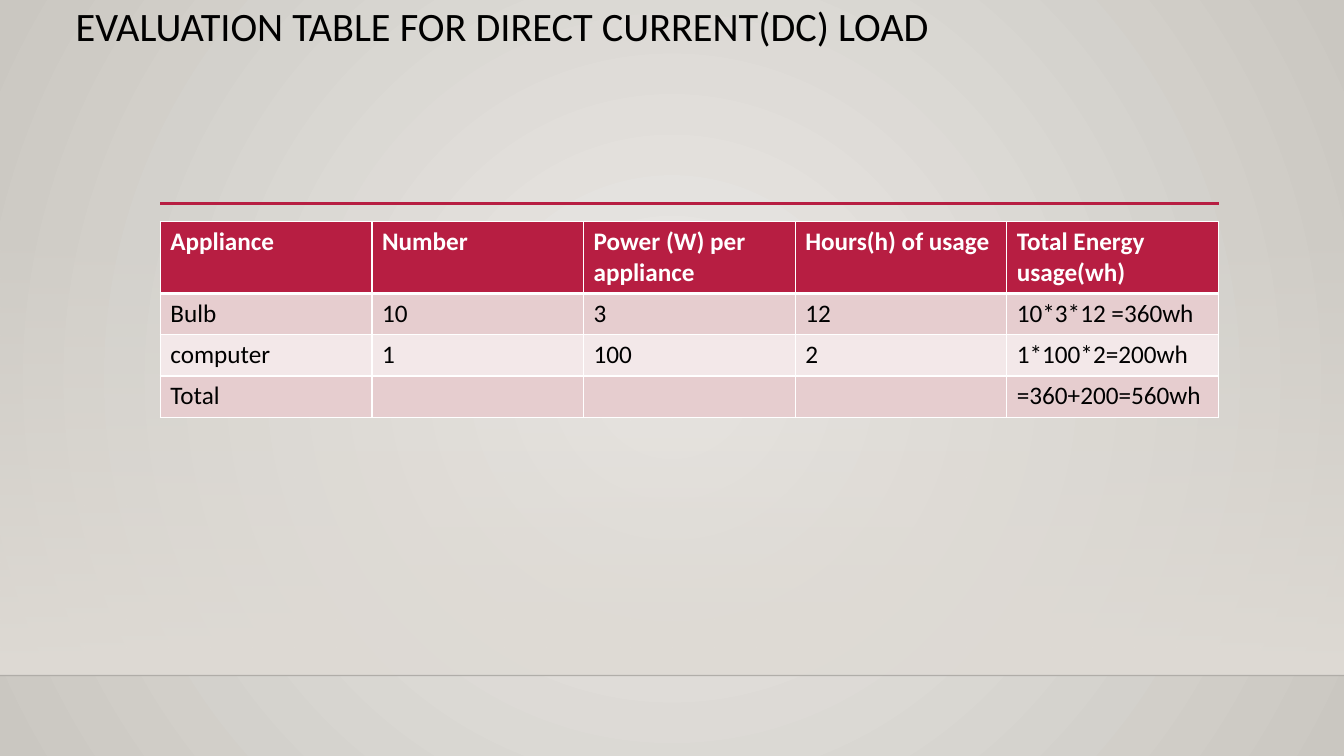
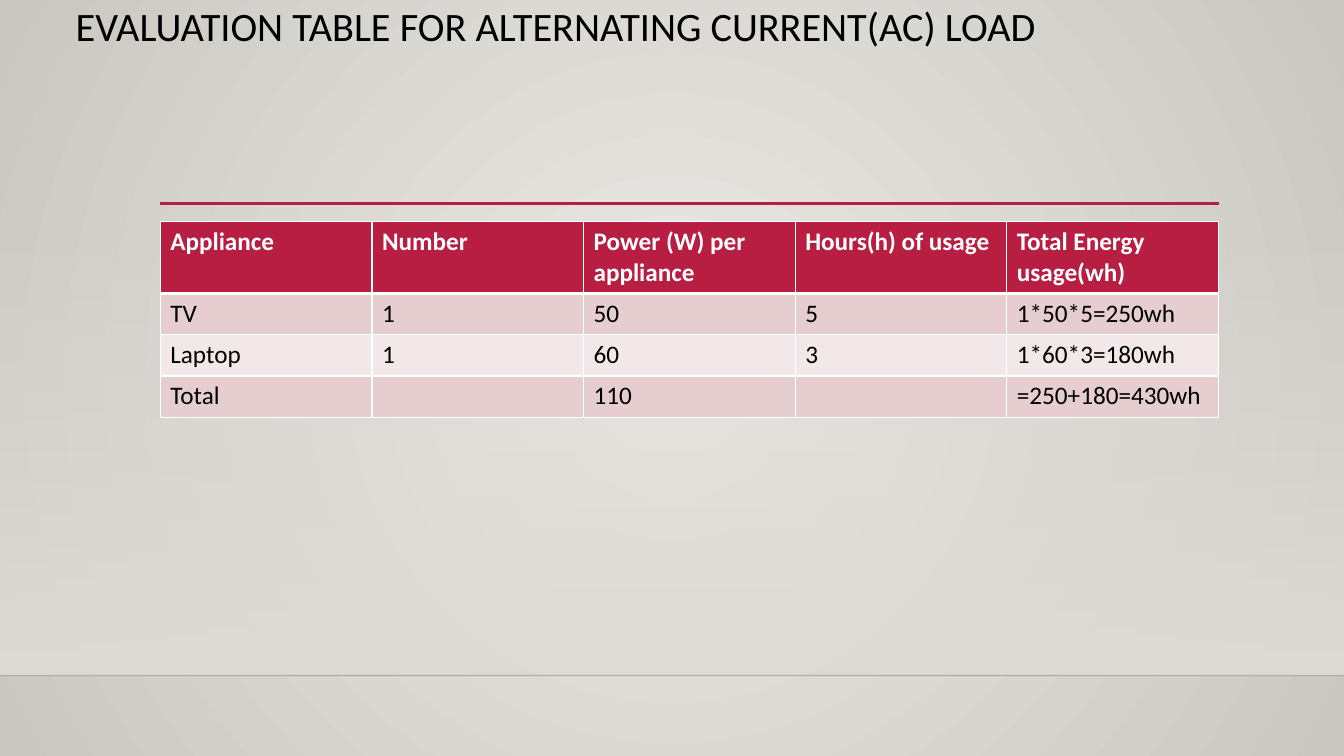
from pptx import Presentation
from pptx.dml.color import RGBColor
from pptx.enum.shapes import MSO_CONNECTOR, MSO_SHAPE
from pptx.enum.text import MSO_ANCHOR, MSO_AUTO_SIZE, PP_ALIGN
from pptx.oxml.ns import qn
from pptx.util import Pt
from lxml.etree import SubElement

BLACK = RGBColor(0x00, 0x00, 0x00)
WHITE = RGBColor(0xFF, 0xFF, 0xFF)
CRIMSON = RGBColor(0xB7, 0x1E, 0x42)
PINK = RGBColor(0xE6, 0xCD, 0xCF)
PALE_PINK = RGBColor(0xF3, 0xE8, 0xE9)
STONE = RGBColor(0xDF, 0xDB, 0xD5)
BACKDROP_CENTER = RGBColor(0xEC, 0xEA, 0xE7)
BACKDROP_EDGE = RGBColor(0xCA, 0xC7, 0xC1)

SLIDE_WIDTH, SLIDE_HEIGHT = 960, 540
BAND_BOX = (0, 159, SLIDE_WIDTH, 323.5)
TITLE_BOX = (46.8, 0, 823.7, 41)
TABLE_BOX = (114.5, 158.4, 756, 139.2)
BODY_ROW_HEIGHT = 29.5
RULE_GAP = 13

TITLE_FONT = {"name": "Calibri", "size": Pt(28.8), "bold": False}
HEADER_FONT = {"name": "Calibri", "size": Pt(18), "bold": True}
BODY_FONT = {**HEADER_FONT, "bold": False}

HEADER = ["Appliance", "Number", "Power (W) per appliance",
          "Hours(h) of usage", "Total Energy usage(wh)"]
LOADS = [
    ("EVALUATION TABLE FOR DIRECT CURRENT(DC) LOAD", [
        ["Bulb", "10", "3", "12", "10*3*12 =360wh"],
        ["computer", "1", "100", "2", "1*100*2=200wh"],
        ["Total", "", "", "", "=360+200=560wh"],
    ]),
    ("EVALUATION TABLE FOR ALTERNATING CURRENT(AC) LOAD", [
        ["TV", "1", "50", "5", "1*50*5=250wh"],
        ["Laptop", "1", "60", "3", "1*60*3=180wh"],
        ["Total", "", "110", "", "=250+180=430wh"],
    ]),
]


def apply_format(target, values):
    """Set every attribute named in a dict of format values."""
    for name, value in values.items():
        setattr(target, name, value)


def format_font(font, values, color):
    """Give a font its format values and colour."""
    apply_format(font, values)
    font.color.rgb = color


def set_gradient(fill, colors):
    """Fill with a gradient between two colours."""
    fill.gradient()
    for stop, color, position in zip(fill.gradient_stops, colors, (0, 1)):
        stop.color.rgb = color
        stop.position = position


def set_alpha(element, percent):
    """Set the opacity of the first colour inside an element."""
    color = element.find(".//" + qn("a:srgbClr"))
    SubElement(color, qn("a:alpha"), val=str(percent * 1000))


def set_backdrop(master):
    """Give the slide master its radial background."""
    set_gradient(master.background.fill, (BACKDROP_CENTER, BACKDROP_EDGE))
    gradient = master.element.find(".//" + qn("a:gradFill"))
    gradient.remove(gradient.find(qn("a:lin")))
    radial = SubElement(gradient, qn("a:path"), path="circle")
    SubElement(radial, qn("a:fillToRect"), dict.fromkeys("ltrb", "50000"))


def add_rule(slide, left, top, width, color, weight):
    """Draw a horizontal line and return it."""
    rule = slide.shapes.add_connector(
        MSO_CONNECTOR.STRAIGHT, Pt(left), Pt(top), Pt(left + width), Pt(top))
    rule.line.color.rgb = color
    rule.line.width = Pt(weight)
    SubElement(rule._element.spPr, qn("a:effectLst"))
    return rule


def add_band(slide, box):
    """Draw the fading band and the faint line at its foot."""
    left, top, width, height = box
    band = slide.shapes.add_shape(MSO_SHAPE.RECTANGLE, *map(Pt, box))
    band.shadow.inherit = False
    band.line.fill.background()
    set_gradient(band.fill, (STONE, STONE))
    band.fill.gradient_angle = 270
    set_alpha(band._element.spPr, 0)
    foot = add_rule(slide, left, top + height, width, BLACK, 1)
    set_alpha(foot._element.spPr, 20)


def set_title(slide, box, text):
    """Place and format the slide title."""
    title = slide.shapes.title
    left, top, width, height = map(Pt, box)
    apply_format(title, {"left": left, "top": top, "width": width, "height": height})
    frame = title.text_frame
    apply_format(frame, {"text": text, "word_wrap": True,
                         "auto_size": MSO_AUTO_SIZE.NONE,
                         "vertical_anchor": MSO_ANCHOR.MIDDLE})
    paragraph = frame.paragraphs[0]
    apply_format(paragraph, {"alignment": PP_ALIGN.LEFT, "line_spacing": 0.9})
    format_font(paragraph.runs[0].font, TITLE_FONT, BLACK)


def set_borders(cell, top=1, bottom=1):
    """Give a cell white borders, with top and bottom widths in points."""
    properties = cell._tc.get_or_add_tcPr()
    for side, weight in (("L", 1), ("R", 1), ("T", top), ("B", bottom)):
        border = SubElement(properties, qn("a:ln" + side), w=str(Pt(weight)))
        fill = SubElement(border, qn("a:solidFill"))
        SubElement(fill, qn("a:srgbClr"), val=str(WHITE))


def add_load_table(slide, box, rows):
    """Draw the appliance table with a rule above it."""
    left, top, width, height = box
    add_rule(slide, left, top - RULE_GAP, width, CRIMSON, 2.5)
    table = slide.shapes.add_table(len(rows), len(rows[0]), *map(Pt, box)).table
    for column in table.columns:
        column.width = Pt(width / len(rows[0]))
    header_height = height - BODY_ROW_HEIGHT * (len(rows) - 1)
    for row_index, texts in enumerate(rows):
        is_header = row_index == 0
        table.rows[row_index].height = Pt(header_height if is_header else BODY_ROW_HEIGHT)
        row_fill = CRIMSON if is_header else (PALE_PINK, PINK)[row_index % 2]
        for column_index, text in enumerate(texts):
            cell = table.cell(row_index, column_index)
            set_borders(cell, top=3 if row_index == 1 else 1, bottom=3 if is_header else 1)
            cell.fill.solid()
            cell.fill.fore_color.rgb = row_fill
            cell.text = text
            format_font(cell.text_frame.paragraphs[0].font,
                        HEADER_FONT if is_header else BODY_FONT,
                        WHITE if is_header else BLACK)
            for run in cell.text_frame.paragraphs[0].runs:
                format_font(run.font, HEADER_FONT if is_header else BODY_FONT,
                            WHITE if is_header else BLACK)


def add_load_slide(presentation, title, rows):
    """Add one evaluation slide."""
    slide = presentation.slides.add_slide(presentation.slide_layouts[5])
    add_band(slide, BAND_BOX)
    set_title(slide, TITLE_BOX, title)
    add_load_table(slide, TABLE_BOX, [HEADER, *rows])


def main():
    """Build and save the presentation."""
    presentation = Presentation()
    presentation.slide_width = Pt(SLIDE_WIDTH)
    presentation.slide_height = Pt(SLIDE_HEIGHT)
    set_backdrop(presentation.slide_master)
    for title, rows in LOADS:
        add_load_slide(presentation, title, rows)
    presentation.save("out.pptx")


if __name__ == "__main__":
    main()
